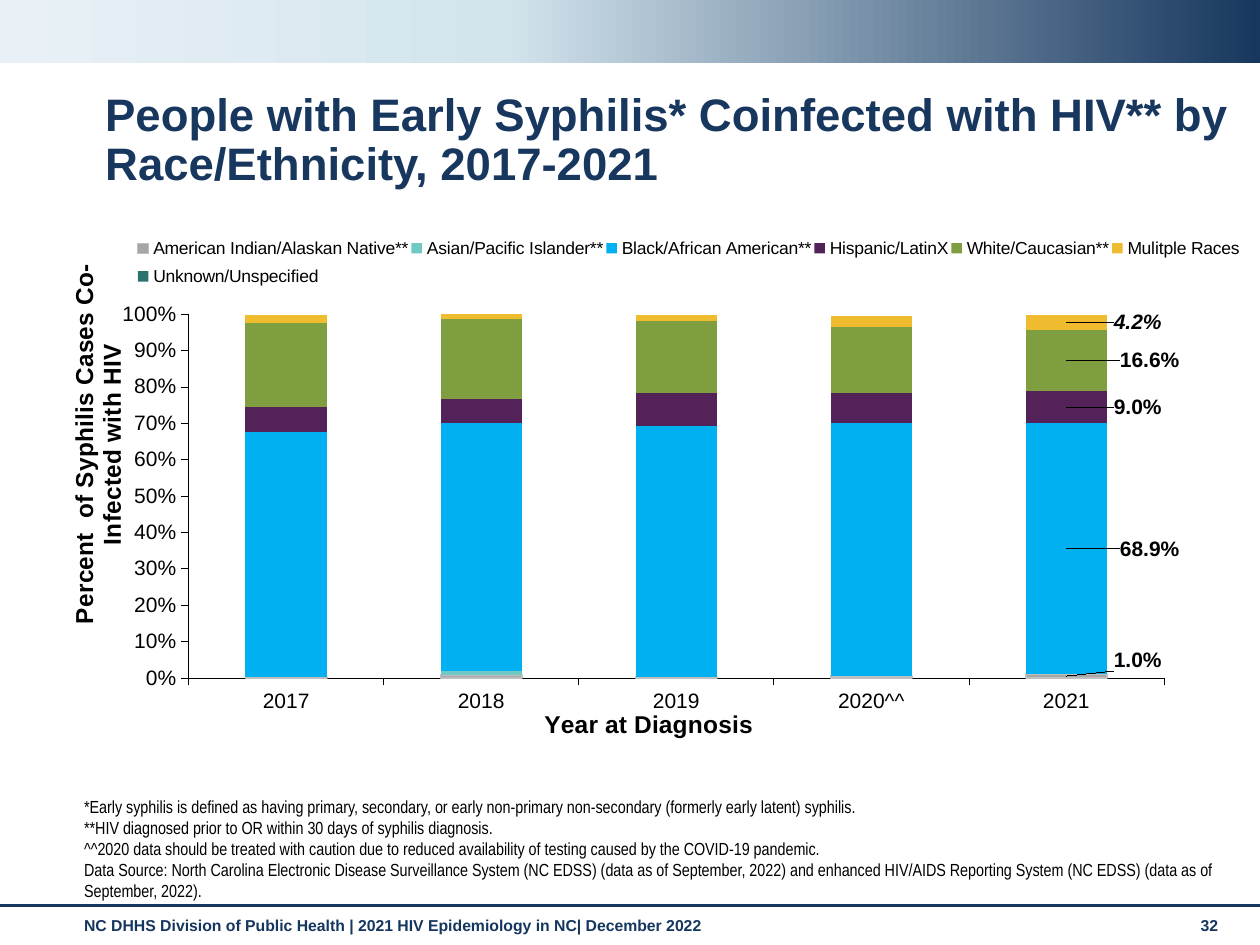
from copy import deepcopy
from typing import NamedTuple, Optional

from lxml import etree
from pptx import Presentation
from pptx import util as u
from pptx.chart.data import CategoryChartData
from pptx.dml.color import RGBColor
from pptx.enum import chart as ch
from pptx.enum import shapes, text
from pptx.oxml.ns import qn

Pt = u.Pt
NAVY, BLACK = "17375E", "000000"
WIDTH, HEIGHT = 720, 540
C15 = "http://schemas.microsoft.com/office/drawing/2012/chart"
C15_URI = "{CE6537A1-D6FC-4f65-9D91-7224C49458BB}"


class Box(NamedTuple):
    left: float
    top: float
    width: float
    height: float

    def points(self) -> list:
        return [Pt(value) for value in self]


class Shift(NamedTuple):
    """Move of a label from its bar's centre, in shares of the chart's size."""
    x: float
    y: float


class Group(NamedTuple):
    name: str
    color: str
    values: tuple
    label: Optional[Shift] = None
    italic: bool = False


YEARS = ("2017", "2018", "2019", "2020^^", "2021")
BESIDE_SHORT, BESIDE_LONG = Shift(0.06, 0), Shift(0.07, 0)
GROUPS = (
    Group("American Indian/Alaskan Native**", "A6A6A6",
          (0.003, 0.008, 0.002, 0.005, 0.01), Shift(0.06, -0.03)),
    Group("Asian/Pacific Islander**", "71C9C5", (0, 0.01, 0, 0, 0)),
    Group("Black/African American**", "00B0F0",
          (0.673, 0.682, 0.69, 0.695, 0.689), BESIDE_LONG),
    Group("Hispanic/LatinX", "522258", (0.068, 0.065, 0.09, 0.084, 0.09), BESIDE_SHORT),
    Group("White/Caucasian**", "7F9E3F", (0.23, 0.22, 0.199, 0.18, 0.166), BESIDE_LONG),
    Group("Mulitple Races", "EFBB2F", (0.024, 0.02, 0.015, 0.031, 0.042), BESIDE_SHORT, True),
    Group("Unknown/Unspecified", "2B726F", (0, 0, 0, 0, 0)),
)
NOTES = (
    "*Early syphilis is defined as having primary, secondary, or early "
    "non-primary non-secondary (formerly early latent) syphilis.",
    "**HIV diagnosed prior to OR within 30 days of syphilis diagnosis.",
    "^^2020 data should be treated with caution due to reduced availability of "
    "testing caused by the COVID-19 pandemic.",
    "Data Source: North Carolina Electronic Disease Surveillance System (NC EDSS) "
    "(data as of September, 2022) and enhanced HIV/AIDS Reporting System (NC EDSS) "
    "(data as of September, 2022).",
)


def rgb(color: str) -> RGBColor:
    return RGBColor.from_string(color)


def set_font(font, size: float, color: str = BLACK, **formats) -> None:
    for name, value in {"name": "Arial", "size": Pt(size), "bold": False, **formats}.items():
        setattr(font, name, value)
    font.color.rgb = rgb(color)


def add_text(page, box: Box, lines, size: float, color: str,
             anchor=text.MSO_ANCHOR.TOP, spacing: float = 1.0, **formats) -> None:
    frame = page.shapes.add_textbox(*box.points()).text_frame
    frame.word_wrap = True
    frame.vertical_anchor = anchor
    for number, line in enumerate(lines):
        para = frame.add_paragraph() if number else frame.paragraphs[0]
        para.line_spacing = spacing
        span = para.add_run()
        span.text = line
        set_font(span.font, size, color, **formats)


def add_banner(page) -> None:
    banner = page.shapes.add_shape(shapes.MSO_SHAPE.RECTANGLE, *Box(0, 0, WIDTH, 36).points())
    banner.shadow.inherit = False
    banner.line.fill.background()
    banner.fill.gradient()
    banner.fill.gradient_angle = 0
    first = banner._element.find(".//" + qn("a:gs"))
    first.addnext(deepcopy(first))
    stops = ((0, "E9F1F6"), (0.4, "D3E4ED"), (1, NAVY))
    for stop, (position, color) in zip(banner.fill.gradient_stops, stops):
        stop.position = position
        stop.color.rgb = rgb(color)


def add_rule(page, top: float) -> None:
    rule = page.shapes.add_connector(
        shapes.MSO_CONNECTOR.STRAIGHT, Pt(0), Pt(top), Pt(WIDTH), Pt(top))
    rule.line.color.rgb = rgb(NAVY)
    rule.line.width = Pt(1.75)
    etree.SubElement(rule._element.spPr, qn("a:effectLst"))


def set_layout(parent, index: int, **parts) -> None:
    """Give a chart part a manual layout, in shares of the chart's size."""
    for old in parent.findall(qn("c:layout")):
        parent.remove(old)
    layout = parent.makeelement(qn("c:layout"))
    manual = etree.SubElement(layout, qn("c:manualLayout"))
    for name, value in parts.items():
        etree.SubElement(manual, qn("c:" + name)).set("val", str(value))
    parent.insert(index, layout)


def hide_leader_lines(labels) -> None:
    for old in labels.findall(qn("c:showLeaderLines")):
        labels.remove(old)
    extensions = etree.SubElement(labels, qn("c:extLst"))
    extension = etree.SubElement(extensions, qn("c:ext"), nsmap={"c15": C15}, uri=C15_URI)
    etree.SubElement(extension, f"{{{C15}}}showLeaderLines", val="0")


def format_axis(axis, title: str, x: float, y: float, rotation: int) -> None:
    axis.has_major_gridlines = False
    axis.major_tick_mark = ch.XL_TICK_MARK.OUTSIDE
    axis.minor_tick_mark = ch.XL_TICK_MARK.NONE
    axis.format.line.color.rgb = rgb(BLACK)
    axis.format.line.width = Pt(0.25)
    set_font(axis.tick_labels.font, 12)
    frame = axis.axis_title.text_frame
    frame.text = title
    set_font(frame.paragraphs[0].runs[0].font, 14, bold=True)
    frame._txBody.find(qn("a:bodyPr")).set("rot", str(rotation * 60000))
    set_layout(axis.axis_title._element, 1, xMode="edge", yMode="edge", x=x, y=y)


def format_series(series, group: Group) -> None:
    series.format.fill.solid()
    series.format.fill.fore_color.rgb = rgb(group.color)
    series.invert_if_negative = False
    if group.label is None:
        return
    series.data_labels.show_value = False
    label = series.points[len(YEARS) - 1].data_label
    set_font(label.font, 12, bold=True, italic=group.italic)
    label.position = ch.XL_LABEL_POSITION.CENTER
    labels = series._element.find(qn("c:dLbls"))
    set_layout(labels.find(qn("c:dLbl")), 1, x=group.label.x, y=group.label.y)
    hide_leader_lines(labels)


def add_race_chart(page, box: Box) -> None:
    data = CategoryChartData(number_format="0.0%")
    data.categories = YEARS
    for group in GROUPS:
        data.add_series(group.name, group.values)
    chart = page.shapes.add_chart(
        ch.XL_CHART_TYPE.COLUMN_STACKED, *box.points(), data).chart
    set_font(chart.font, 12, bold=True)
    chart.has_title = False

    plot = chart.plots[0]
    plot.gap_width, plot.overlap, plot.vary_by_categories = 140, 100, False
    for series, group in zip(plot.series, GROUPS):
        format_series(series, group)
    first_line = plot.series[0].format.line
    first_line.color.rgb = rgb("BFBFBF")
    first_line.width = Pt(1)
    set_layout(chart._chartSpace.find(".//" + qn("c:plotArea")), 0, layoutTarget="inner",
               xMode="edge", yMode="edge", x=0.115, y=0.206, w=0.819, h=0.675)

    format_axis(chart.category_axis, "Year at Diagnosis", 0.41, 0.93, 0)
    values = chart.value_axis
    format_axis(values, "Percent  of Syphilis Cases Co-Infected with HIV", 0.01, 0.11, -90)
    values.minimum_scale, values.maximum_scale, values.major_unit = 0, 1, 0.1
    values.tick_labels.number_format = "0%"
    values.tick_labels.number_format_is_linked = False

    chart.has_legend = True
    legend = chart.legend
    legend.position = ch.XL_LEGEND_POSITION.TOP
    legend.include_in_layout = False
    set_font(legend.font, 10)
    set_layout(legend._element, 1, xMode="edge", yMode="edge", x=0.07, y=0.05, w=0.93, h=0.12)


def main() -> None:
    deck = Presentation()
    deck.slide_width, deck.slide_height = Pt(WIDTH), Pt(HEIGHT)
    page = deck.slides.add_slide(deck.slide_layouts[6])
    add_banner(page)
    add_rule(page, 517.5)
    add_text(page, Box(53, 49, 657.5, 43),
             ["People with Early Syphilis* Coinfected with HIV** by Race/Ethnicity, 2017-2021"],
             26, NAVY, spacing=0.9, bold=True)
    add_race_chart(page, Box(29.5, 116, 680.5, 310.5))
    add_text(page, Box(41, 503, 669, 15.5), NOTES, 10, BLACK,
             text.MSO_ANCHOR.BOTTOM, name="Arial Narrow")
    add_text(page, Box(41, 520, 629, 21),
             ["NC DHHS Division of Public Health | 2021 HIV Epidemiology in NC| December 2022"],
             9, "15365E", bold=True)
    add_text(page, Box(679, 520, 32, 21), ["32"], 9, "15365E", bold=True)
    deck.save("out.pptx")


if __name__ == "__main__":
    main()
